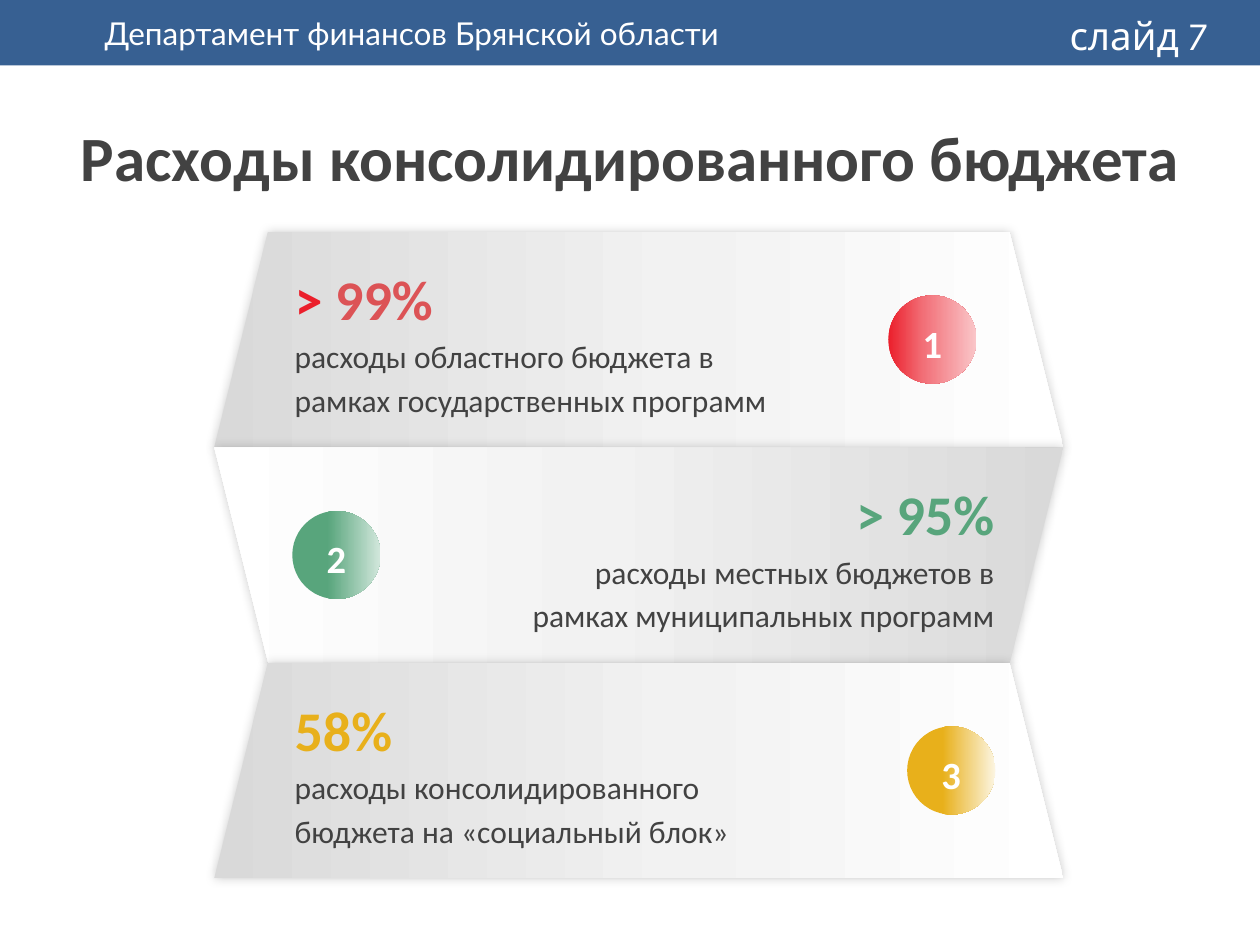
from copy import deepcopy

from lxml.etree import SubElement
from pptx import Presentation
from pptx.dml.color import RGBColor
from pptx.enum.shapes import MSO_SHAPE
from pptx.enum.text import MSO_ANCHOR, PP_ALIGN
from pptx.oxml.ns import qn
from pptx.util import Inches, Pt


def paint(shape, *stops):
    """Fill with one hex colour, or a left-to-right gradient of (share, hex)."""
    shape.line.fill.background()
    shape.shadow.inherit = False
    if isinstance(stops[0], str):
        shape.fill.solid()
        shape.fill.fore_color.rgb = RGBColor.from_string(stops[0])
        return
    shape.fill.gradient()
    shape.fill.gradient_angle = 0
    stop_list = shape._element.spPr.find(qn("a:gradFill")).find(qn("a:gsLst"))
    stop_list.append(deepcopy(stop_list[0]))
    for stop, (share, colour) in zip(shape.fill.gradient_stops, stops):
        stop.position = share
        stop.color.rgb = RGBColor.from_string(colour)


def write(paragraph, text, size, colour, bold=False, face="Calibri"):
    run = paragraph.add_run()
    run.text = text
    run.font.size = Pt(size)
    run.font.bold = bold
    run.font.name = face
    run.font.color.rgb = RGBColor.from_string(colour)


deck = Presentation()
deck.slide_width, deck.slide_height = Inches(10), Inches(7.5)
slide = deck.slides.add_slide(deck.slide_layouts[5])
shapes = slide.shapes
DARK, WHITE = "424242", "FFFFFF"

# Header strip
header = shapes.add_shape(MSO_SHAPE.RECTANGLE, 0, 0, deck.slide_width, Inches(0.52))
paint(header, "376092")
header.text_frame.margin_left = Inches(0.83)
header.text_frame.vertical_anchor = MSO_ANCHOR.MIDDLE
department = header.text_frame.paragraphs[0]
department.alignment = PP_ALIGN.LEFT
write(department, "Департамент финансов Брянской области", 18, WHITE, face="Lato")

# Title
title = shapes.title
title.left, title.top = Inches(0.12), Inches(0.85)
title.width, title.height = Inches(9.76), Inches(0.78)
title.text_frame.vertical_anchor = MSO_ANCHOR.MIDDLE
heading = title.text_frame.paragraphs[0]
heading.alignment = PP_ALIGN.CENTER
write(heading, "Расходы консолидированного бюджета", 36, DARK, True)

# Folded bands: one row each, every second one turned over
BAND_LEFT, BAND_TOP = Inches(1.7), Inches(1.84)
BAND_WIDTH, ROW = Inches(6.74), Inches(1.71)
NOTE_WIDTH, NOTE_HEIGHT = Inches(4.17), Inches(1.45)
BADGE = Inches(0.7)

# Figure runs, caption, note left, alignment, badge left, badge gradient
rows = [
    ([("> ", "EB1F2B"), ("99%", "DC5356")],
     "расходы областного бюджета в рамках государственных программ",
     2.24, PP_ALIGN.LEFT, 7.05, ("EB1F2B", "F27078", "FAC6C9")),
    ([("> 95%", "58A57C")],
     "расходы местных бюджетов в рамках муниципальных программ",
     3.82, PP_ALIGN.RIGHT, 2.32, ("58A57C", "58A57C", "D2E7DC")),
    ([("58%", "E8B01B")],
     "расходы консолидированного бюджета на «социальный блок»",
     2.24, PP_ALIGN.LEFT, 7.2, ("E8B01B", "E8B01B", "FCF5E1")),
]

for index in range(len(rows)):
    band = shapes.add_shape(MSO_SHAPE.TRAPEZOID, BAND_LEFT, BAND_TOP + index * ROW,
                            BAND_WIDTH, ROW)
    band.rotation = 180 * (index % 2)
    paint(band, (0, "D9D9D9"), (0.55, "F2F2F2"), (1, WHITE))
    # Soft shadow around the band
    effects = band._element.spPr.find(qn("a:effectLst"))
    glow = SubElement(effects, qn("a:outerShdw"), blurRad=str(Pt(6)), dist="0",
                      dir="18900000", algn="ctr", rotWithShape="0")
    black = SubElement(glow, qn("a:srgbClr"), val="000000")
    SubElement(black, qn("a:alpha"), val="20000")

# Figures, captions and numbered badges
for index, (figures, caption, note_left, side, badge_left, tints) in enumerate(rows):
    row_top = BAND_TOP + index * ROW
    note = shapes.add_textbox(Inches(note_left), row_top + (ROW - NOTE_HEIGHT) // 2,
                              NOTE_WIDTH, NOTE_HEIGHT).text_frame
    note.word_wrap = True
    figure, detail = note.paragraphs[0], note.add_paragraph()
    for paragraph in (figure, detail):
        paragraph.alignment = side
        paragraph.line_spacing = 1.15
    for text, colour in figures:
        write(figure, text, 32, colour, True)
    write(detail, caption, 18, DARK)

    badge = shapes.add_shape(MSO_SHAPE.OVAL, Inches(badge_left),
                             row_top + (ROW - BADGE) // 2, BADGE, BADGE)
    paint(badge, *zip((0, 0.4, 1), tints))
    badge.text_frame.vertical_anchor = MSO_ANCHOR.MIDDLE
    number = badge.text_frame.paragraphs[0]
    number.alignment = PP_ALIGN.CENTER
    number.line_spacing = 1.15
    write(number, str(index + 1), 22, WHITE, True)

# Slide number label
label = shapes.add_textbox(Inches(8.39), Inches(0.05), Inches(1.5), Inches(0.47))
label.text_frame.word_wrap = True
write(label.text_frame.paragraphs[0], "слайд 7", 22, WHITE, face="League Spartan")

deck.save("out.pptx")
